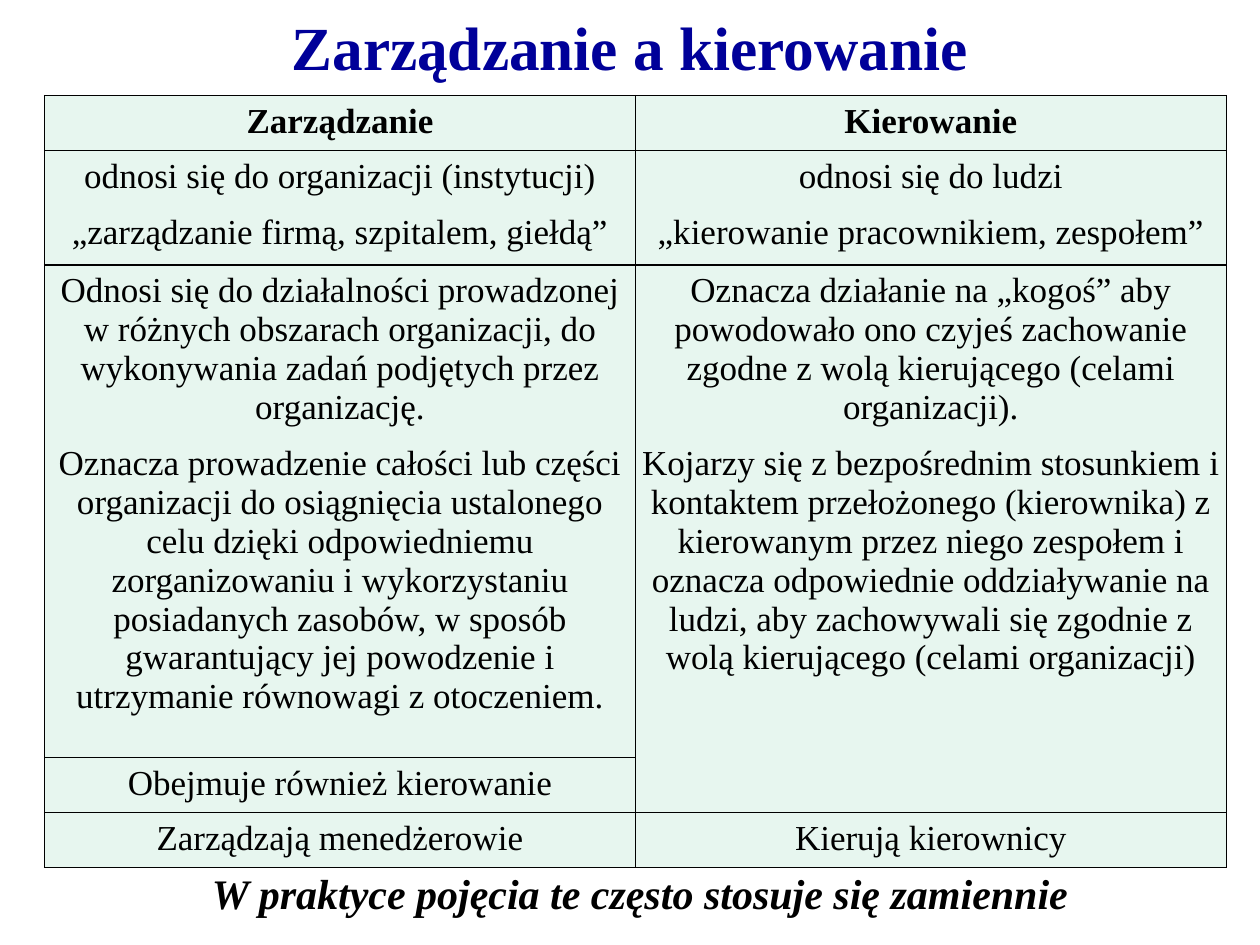
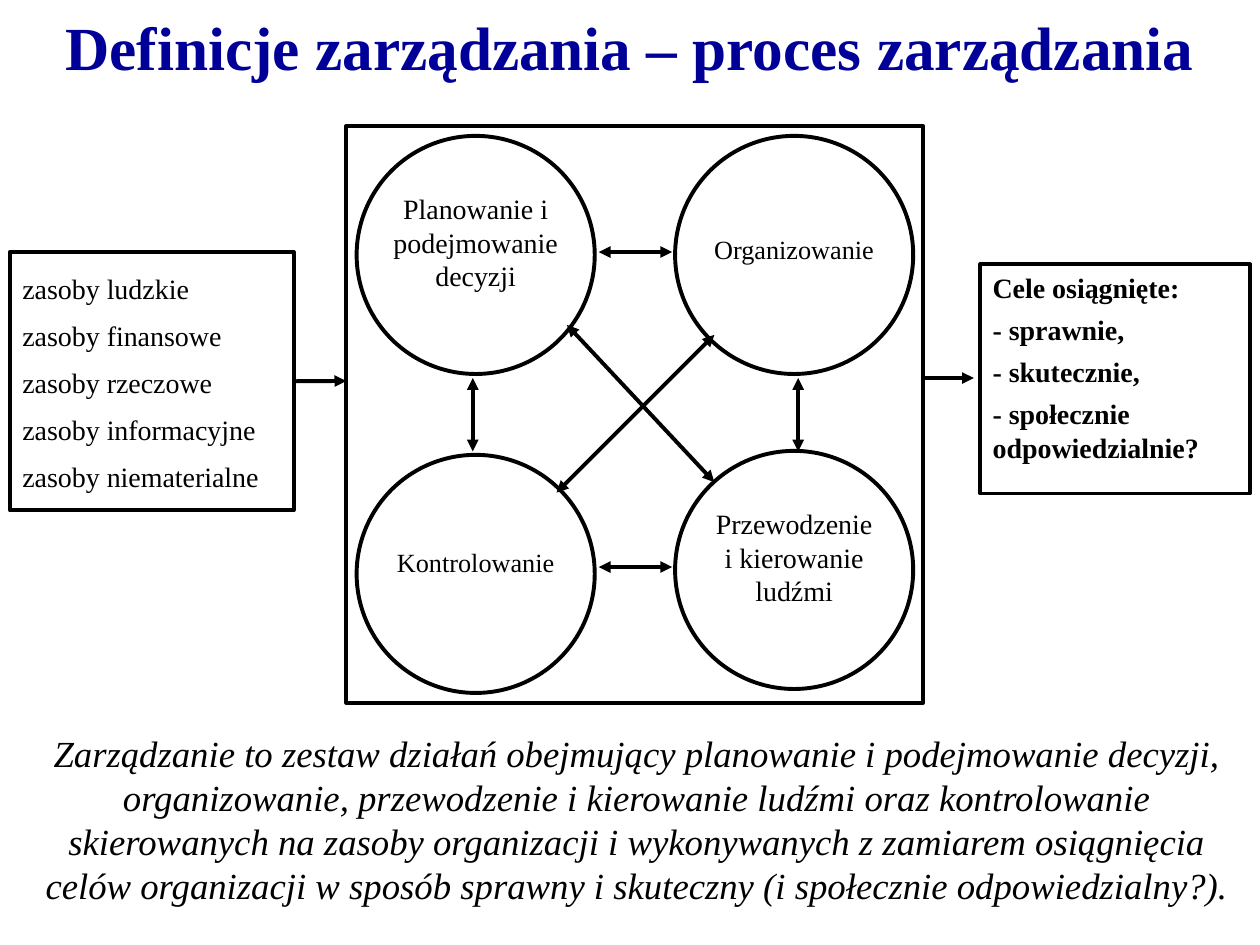
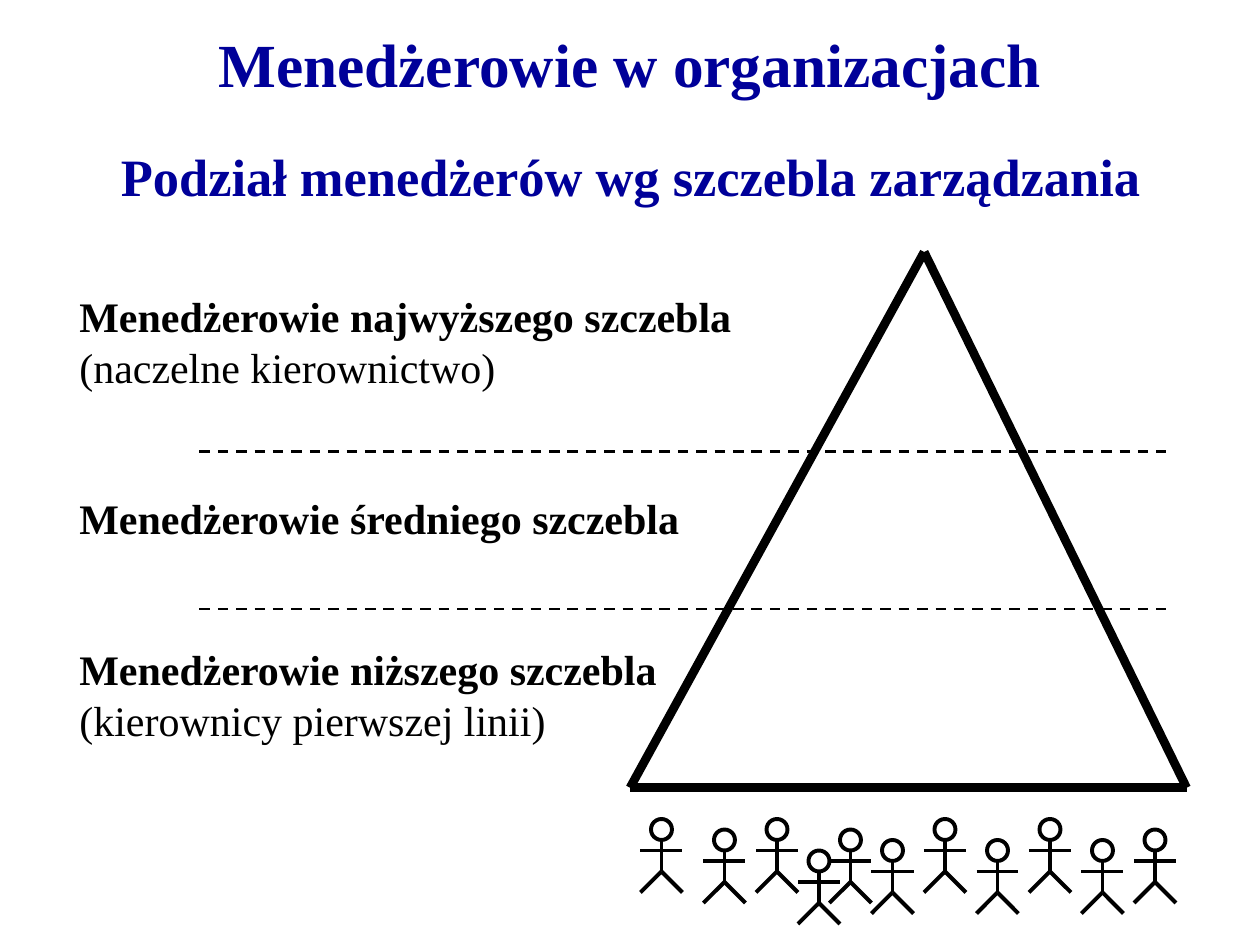
import pptx
import pptx.dml.color
import pptx.enum.dml
import pptx.enum.shapes
import pptx.enum.text
import pptx.oxml
import pptx.oxml.ns
import pptx.util
from pptx.util import Cm, Pt

COLOURS = {"ink": "000000", "title": "000099", "paper": "FFFFFF", "cell": "E7F6EF"}
FONT = "Times New Roman"
PAGE_WIDTH = 25.4
LINE_HEIGHT = 1.2
GRID = 2.54 / 12
ALIGN = pptx.enum.text.PP_ALIGN
ANCHOR = pptx.enum.text.MSO_ANCHOR
SHAPE = pptx.enum.shapes.MSO_SHAPE

TABLE_ROWS = [
    (1.1, "Zarządzanie", "Kierowanie"),
    (2.3,
     "odnosi się do organizacji (instytucji)\n„zarządzanie firmą, szpitalem, giełdą”",
     "odnosi się do ludzi\n„kierowanie pracownikiem, zespołem”"),
    (9.92,
     "Odnosi się do działalności prowadzonej w różnych obszarach organizacji, "
     "do wykonywania zadań podjętych przez organizację.\n"
     "Oznacza prowadzenie całości lub części organizacji do osiągnięcia ustalonego "
     "celu dzięki odpowiedniemu zorganizowaniu i wykorzystaniu posiadanych zasobów, "
     "w sposób gwarantujący jej powodzenie i utrzymanie równowagi z otoczeniem.",
     "Oznacza działanie na „kogoś” aby powodowało ono czyjeś zachowanie zgodne "
     "z wolą kierującego (celami organizacji).\n"
     "Kojarzy się z bezpośrednim stosunkiem i kontaktem przełożonego (kierownika) "
     "z kierowanym przez niego zespołem i oznacza odpowiednie oddziaływanie na ludzi, "
     "aby zachowywali się zgodnie z wolą kierującego (celami organizacji)"),
    (1.1, "Obejmuje również kierowanie", ""),
    (1.1, "Zarządzają menedżerowie", "Kierują kierownicy"),
]

RESOURCES = ("zasoby ludzkie\nzasoby finansowe\nzasoby rzeczowe\n"
             "zasoby informacyjne\nzasoby niematerialne")
GOALS = "Cele osiągnięte:\n- sprawnie,\n- skutecznie,\n- społecznie odpowiedzialnie?"
DEFINITION = ("Zarządzanie to zestaw działań obejmujący planowanie i podejmowanie decyzji,\v"
              "organizowanie, przewodzenie i kierowanie ludźmi oraz kontrolowanie\v"
              "skierowanych na zasoby organizacji i wykonywanych z zamiarem osiągnięcia\v"
              "celów organizacji w sposób sprawny i skuteczny (i społecznie odpowiedzialny?).")

# left, top, text, size, space above the text
FUNCTIONS = [
    (7.19, 2.74, "Planowanie i podejmowanie decyzji", 16, 0.42),
    (13.61, 2.74, "Organizowanie", 15, 1.27),
    (13.61, 9.09, "Przewodzenie i kierowanie ludźmi", 16, 0.42),
    (7.19, 9.17, "Kontrolowanie", 15, 1.14),
]
FUNCTION_LINKS = [
    ((12.07, 5.08), (13.55, 5.08)), ((12.07, 11.43), (13.55, 11.43)),
    ((9.53, 9.1), (9.53, 7.62)), ((16.09, 9.1), (16.09, 7.62)),
    ((11.22, 9.93), (14.4, 6.75)), ((14.4, 9.72), (11.43, 6.55)),
]

LEVELS = [
    ("Menedżerowie najwyższego szczebla", "(naczelne kierownictwo)"),
    ("Menedżerowie średniego szczebla", ""),
    ("Menedżerowie niższego szczebla", "(kierownicy pierwszej linii)"),
]
# centre and top of each worker, in grid steps
WORKERS = [(69, 79), (63, 78), (110, 79), (105, 80), (100, 78), (74, 78),
           (78, 81), (85, 80), (90, 78), (81, 79), (95, 80)]


def colour(name):
    return pptx.dml.color.RGBColor.from_string(COLOURS[name])


def add_para(frame, text, size=16, ink="ink", bold=False, italic=False,
             align=ALIGN.LEFT, before=0, after=0, leading=LINE_HEIGHT):
    """Add a paragraph; leading is a multiple of the size, None for the font's own."""
    first = not frame.text
    para = frame.paragraphs[0] if first else frame.add_paragraph()
    para.text = text
    para.alignment = align
    para.space_before = Pt(0 if first else before)
    para.space_after = Pt(after)
    if leading:
        para.line_spacing = Pt(size * leading)
    for span in para.runs:
        span.font.name = FONT
        span.font.size = Pt(size)
        span.font.bold = bold
        span.font.italic = italic
        span.font.color.rgb = colour(ink)


def write(frame, text, **style):
    for line in text.split("\n"):
        add_para(frame, line, **style)


def add_text(page, place, text="", wrap=False, anchor=ANCHOR.TOP, **style):
    box = page.shapes.add_textbox(*map(Cm, place))
    frame = box.text_frame
    frame.word_wrap = wrap
    frame.vertical_anchor = anchor
    write(frame, text, **style)
    return frame


def add_title(page, text, left, top, height):
    add_text(page, (left, top, PAGE_WIDTH - 2 * left, height), text, wrap=True,
             anchor=ANCHOR.MIDDLE, size=35, ink="title", bold=True, align=ALIGN.CENTER)


def add_outline(parent, kind, place):
    shape = parent.shapes.add_shape(kind, *map(Cm, place))
    shape.shadow.inherit = False
    shape.fill.solid()
    shape.fill.fore_color.rgb = colour("paper")
    shape.line.color.rgb = colour("ink")
    shape.line.width = Pt(2.25)
    return shape


def add_box(page, place, text, **style):
    box = add_outline(page, SHAPE.RECTANGLE, place)
    box.text_frame.word_wrap = True
    box.text_frame.vertical_anchor = ANCHOR.TOP
    write(box.text_frame, text, **style)
    return box


def add_circle(page, left, top, text, size, space_above):
    circle = add_outline(page, SHAPE.OVAL, (left, top, 4.8, 4.8))
    frame = circle.text_frame
    frame.word_wrap = True
    frame.vertical_anchor = ANCHOR.TOP
    frame.margin_left = frame.margin_right = frame.margin_bottom = 0
    frame.margin_top = Cm(space_above)
    write(frame, text, size=size, align=ALIGN.CENTER)


def add_line(parent, start, end, width=2.25, dashed=False, arrows=()):
    """Draw a straight line; arrows names its ends: headEnd, tailEnd."""
    line = parent.shapes.add_connector(
        pptx.enum.shapes.MSO_CONNECTOR.STRAIGHT, *map(Cm, start + end))
    line.line.color.rgb = colour("ink")
    line.line.width = Pt(width)
    if dashed:
        line.line.dash_style = pptx.enum.dml.MSO_LINE.DASH
    for name in arrows:
        add_xml(line.line._get_or_add_ln(), f'<a:{name} %s type="triangle"/>')
    add_xml(line._element.spPr, "<a:effectLst %s/>")
    return line


def add_xml(parent, markup):
    parent.append(pptx.oxml.parse_xml(markup % pptx.oxml.ns.nsdecls("a")))


def format_cell(cell):
    for side in "LRTB":
        add_xml(cell._tc.get_or_add_tcPr(),
                f'<a:ln{side} %s w="12192"><a:solidFill>'
                f'<a:srgbClr val="{COLOURS["ink"]}"/></a:solidFill></a:ln{side}>')
    cell.fill.solid()
    cell.fill.fore_color.rgb = colour("cell")
    cell.margin_left = cell.margin_right = Cm(0.1)
    cell.margin_top = cell.margin_bottom = Cm(0.13)


def add_comparison(page):
    heights = [row[0] for row in TABLE_ROWS]
    table = page.shapes.add_table(len(TABLE_ROWS), 2, Cm(0.9), Cm(1.93),
                                  Cm(23.82), Cm(sum(heights))).table
    table.first_row = table.horz_banding = False
    for row_number, (height, *texts) in enumerate(TABLE_ROWS):
        table.rows[row_number].height = Cm(height)
        for column, text in enumerate(texts):
            cell = table.cell(row_number, column)
            format_cell(cell)
            write(cell.text_frame, text, size=20, bold=row_number == 0,
                  align=ALIGN.CENTER, before=5, after=5, leading=None)
    table.cell(2, 1).merge(table.cell(3, 1))


def add_worker(page, centre, top):
    def at(across, down):
        return ((centre + across) * GRID, (top + down) * GRID)

    worker = page.shapes.add_group_shape()
    add_outline(worker, SHAPE.FLOWCHART_CONNECTOR, at(-1, 0) + (2 * GRID, 2 * GRID))
    hips = at(0, 5)
    add_line(worker, at(0, 2), hips)
    add_line(worker, hips, at(-2, 7))
    add_line(worker, hips, at(2, 7))
    add_line(worker, at(-2, 3), at(2, 3))


def build_comparison(page):
    add_title(page, "Zarządzanie a kierowanie", 1.9, 0.2, 1.47)
    add_text(page, (4.02, 17.36, 17.78, 1.27),
             "W praktyce pojęcia te często stosuje się zamiennie",
             size=24, bold=True, italic=True)
    add_comparison(page)


def build_process(page):
    add_title(page, "Definicje zarządzania – proces zarządzania", 0.5, 0.2, 1.47)
    resources = add_box(page, (0.2, 5.08, 5.72, 5.21), RESOURCES,
                        leading=1.4 * LINE_HEIGHT)
    add_outline(page, SHAPE.RECTANGLE, (6.98, 2.54, 11.63, 11.63))
    add_box(page, (19.76, 5.33, 5.44, 4.62), GOALS, bold=True, after=4.8)
    for function in FUNCTIONS:
        add_circle(page, *function)
    supply = add_line(page, (5.92, 7.68), (6.98, 7.68), arrows=["tailEnd"])
    supply.begin_connect(resources, 3)
    add_line(page, (18.61, 7.62), (19.63, 7.62), arrows=["tailEnd"])
    for start, end in FUNCTION_LINKS:
        add_line(page, start, end, arrows=["headEnd", "tailEnd"])
    add_text(page, (0.61, 14.6, 24.46, 3.84), DEFINITION, size=21, italic=True,
             align=ALIGN.CENTER)


def build_levels(page):
    add_title(page, "Menedżerowie w organizacjach", 1.9, 0.64, 1.27)
    add_text(page, (2.18, 2.77, 21.08, 1.52), "Podział menedżerów wg szczebla zarządzania",
             size=30, ink="title", bold=True, align=ALIGN.RIGHT)
    frame = add_text(page, (1.35, 5.74, 13.87, 9.4))
    for name, remark in LEVELS:
        add_para(frame, name, size=24, bold=True, before=2 * 24 * LINE_HEIGHT)
        if remark:
            add_para(frame, remark, size=24)
    peak, left_foot, right_foot = (18.63, 5.08), (12.7, 15.88), (23.92, 15.88)
    for start, end in [(peak, left_foot), (peak, right_foot), (left_foot, right_foot)]:
        add_line(page, start, end, width=5)
    for height in (9.1, 12.28):
        add_line(page, (4.02, height), (23.5, height), width=1.5, dashed=True)
    for centre, top in WORKERS:
        add_worker(page, centre, top)


def main():
    deck = pptx.Presentation()
    deck.slide_width, deck.slide_height = Cm(PAGE_WIDTH), Cm(19.05)
    for build in (build_comparison, build_process, build_levels):
        build(deck.slides.add_slide(deck.slide_layouts[6]))
    deck.save("out.pptx")


if __name__ == "__main__":
    main()
